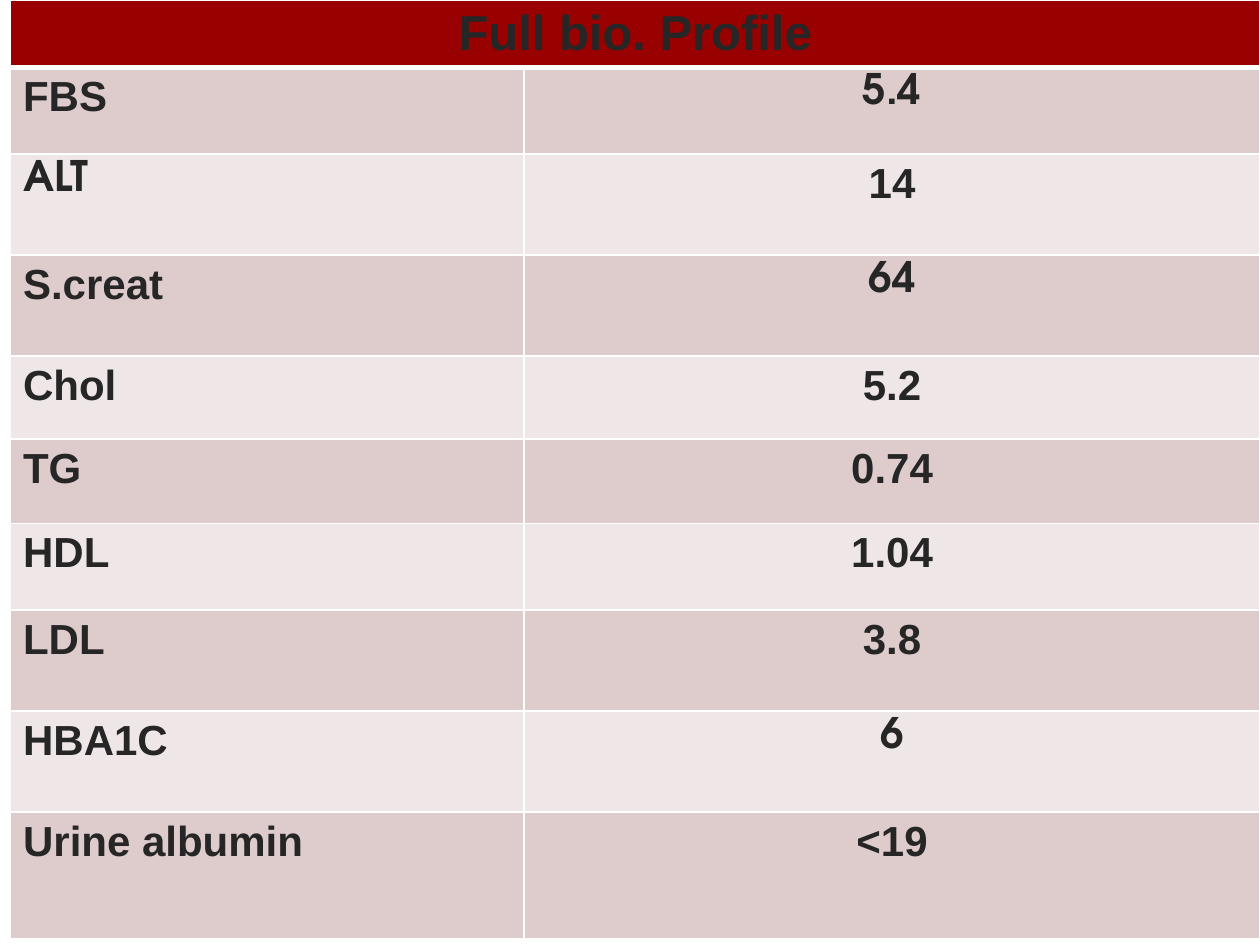
import pptx
import pptx.util
import pptx.dml.color
import pptx.enum.text
from lxml import etree

Pt = pptx.util.Pt
RGB = pptx.dml.color.RGBColor.from_string
NS = "http://schemas.openxmlformats.org/drawingml/2006/main"
HUES = {"head": "990000", "dark": "DECCCC", "light": "EFE7E7",
        "ink": "262626", "rule": "FFFFFF"}
SANS, GEO = "Arial", "TeX Gyre Adventor"


def style(cell, hue, base=1):
    """Fill a cell and rule its four sides."""
    cell.fill.solid()
    cell.fill.fore_color.rgb = RGB(HUES[hue])
    props = cell._tc.get_or_add_tcPr()
    for i, side in enumerate("LRTB"):
        width = base if side == "B" else 1
        line = etree.Element(f"{{{NS}}}ln{side}", w=str(Pt(width)))
        fill = etree.SubElement(line, f"{{{NS}}}solidFill")
        etree.SubElement(fill, f"{{{NS}}}srgbClr", val=HUES["rule"])
        props.insert(i, line)


def write(cell, text, face, size, mid):
    """Put one bold run in a cell."""
    para = cell.text_frame.paragraphs[0]
    if mid:
        para.alignment = pptx.enum.text.PP_ALIGN.CENTER
    run = para.add_run()
    run.text = text
    run.font.name = face
    run.font.size = Pt(size)
    run.font.bold = True
    run.font.color.rgb = RGB(HUES["ink"])


# Slide
deck = pptx.Presentation()
deck.slide_width, deck.slide_height = Pt(720), Pt(540)
slide = deck.slides.add_slide(deck.slide_layouts[6])

# Test name, its font, result, its font, row height
tests = [
    ("FBS", SANS, "5.4", GEO, 49.7),
    ("ALT", GEO, "14", SANS, 57.6),
    ("S.creat", SANS, "64", GEO, 57.6),
    ("Chol", SANS, "5.2", SANS, 47.5),
    ("TG", SANS, "0.74", SANS, 48.2),
    ("HDL", SANS, "1.04", SANS, 49.7),
    ("LDL", SANS, "3.8", SANS, 57.6),
    ("HBA1C", SANS, "6", GEO, 57.6),
    ("Urine albumin", SANS, "<19", SANS, 72.7),
]

# Table
frame = slide.shapes.add_table(len(tests) + 1, 2, Pt(6), Pt(0), Pt(714), Pt(540))
table = frame.table
table.columns[0].width = Pt(293.5)
table.columns[1].width = Pt(420.5)

# Header row
table.rows[0].height = Pt(37.5)
for cell in table.rows[0].cells:
    style(cell, "head", 3)
table.cell(0, 0).merge(table.cell(0, 1))
write(table.cell(0, 0), "Full bio. Profile", SANS, 28, True)

# Test rows
for i, (name, face, value, font, high) in enumerate(tests, 1):
    table.rows[i].height = Pt(high)
    for cell in table.rows[i].cells:
        style(cell, "dark" if i % 2 else "light")
    write(table.cell(i, 0), name, face, 24, False)
    write(table.cell(i, 1), value, font, 24, True)

deck.save("out.pptx")
